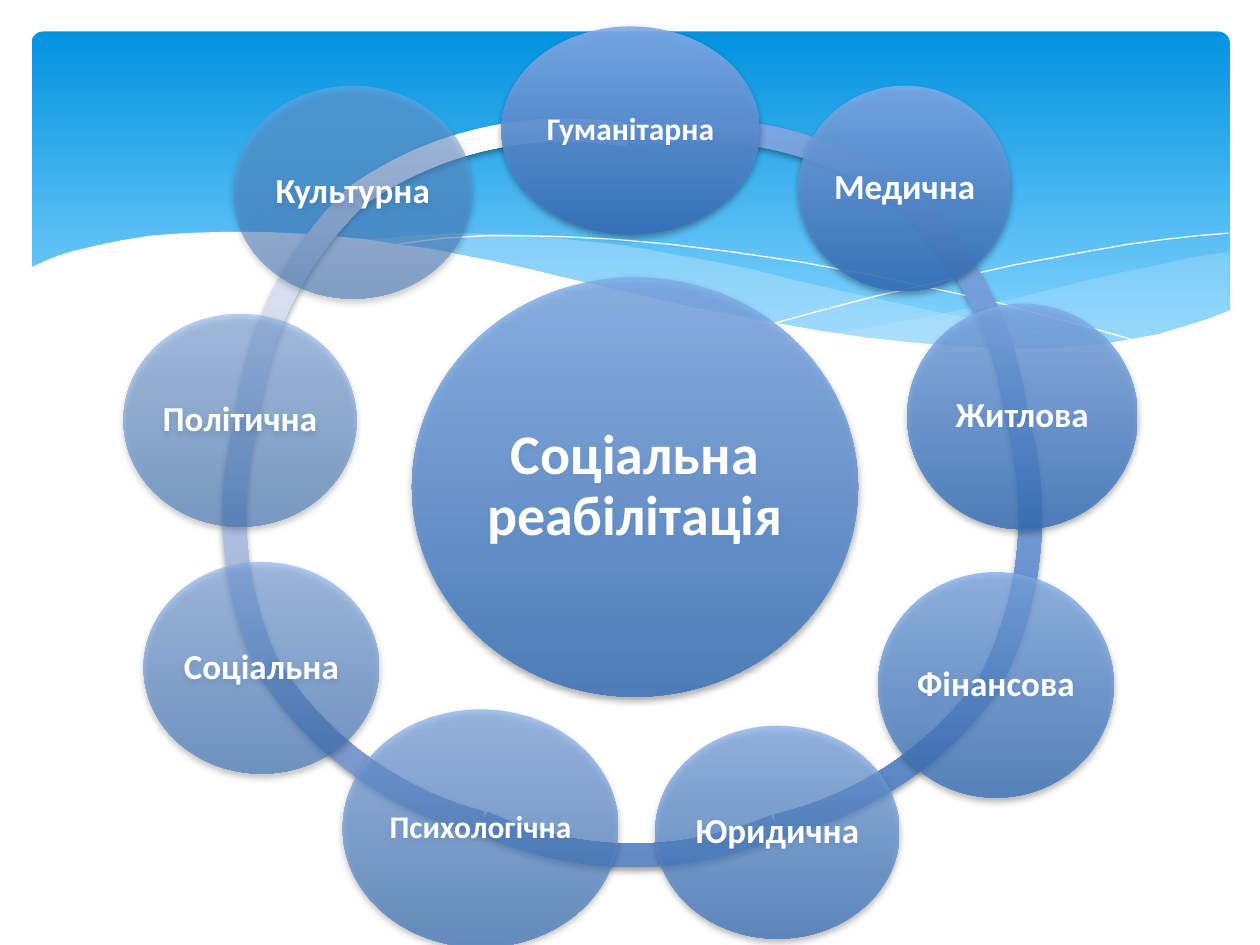
from dataclasses import dataclass

from lxml import etree
from pptx import Presentation
from pptx.dml.color import RGBColor
from pptx.enum.shapes import MSO_SHAPE
from pptx.enum.text import MSO_ANCHOR, PP_ALIGN
from pptx.oxml.ns import qn
from pptx.util import Inches, Pt

ROUNDED, ARC, ELLIPSE = MSO_SHAPE.ROUNDED_RECTANGLE, MSO_SHAPE.BLOCK_ARC, MSO_SHAPE.OVAL
MIDDLE, CENTER = MSO_ANCHOR.MIDDLE, PP_ALIGN.CENTER


@dataclass(frozen=True)
class Theme:
    font: str = "Calibri"
    white: str = "FFFFFF"
    wave: str = "C6E7FC"
    sky: tuple = ("0293E0", "83D3FE")
    bubble: tuple = ("80ACEA", "3570BA")
    shadow: str = "000000"
    hub_size: int = 32
    node_size: int = 20
    long_node_size: int = 18


class Diagram:
    """Draws the elements of one slide in one theme."""

    def __init__(self, slide, theme):
        self.shapes = slide.shapes
        self.theme = theme

    def set_opacity(self, shape, percent):
        for color in shape.element.spPr.iter(qn("a:srgbClr")):
            etree.SubElement(color, qn("a:alpha"), val=str(percent * 1000))

    def add_shadow(self, shape):
        effects = shape.element.spPr.find(qn("a:effectLst"))
        outer = etree.SubElement(effects, qn("a:outerShdw"), blurRad=str(Pt(4)),
                                 dist=str(Pt(2)), dir="5400000", rotWithShape="0")
        color = etree.SubElement(outer, qn("a:srgbClr"), val=self.theme.shadow)
        etree.SubElement(color, qn("a:alpha"), val="38000")

    def gradient_shape(self, kind, box, colors, end=1.0):
        """Add a borderless shape shaded from its top down to the second colour."""
        shape = self.shapes.add_shape(kind, *(Inches(length) for length in box))
        shape.shadow.inherit = False
        shape.line.fill.background()
        shape.fill.gradient()
        shape.fill.gradient_angle = 270
        for stop, color, position in zip(shape.fill.gradient_stops, colors, (0, end)):
            stop.color.rgb = RGBColor.from_string(color)
            stop.position = position
        return shape

    def banner(self, box):
        panel = self.gradient_shape(ROUNDED, box, self.theme.sky, end=0.9)
        panel.adjustments[0] = 0.034

    def outline(self, points, closed):
        start, *rest = [(Inches(x), Inches(y)) for x, y in points]
        builder = self.shapes.build_freeform(*start)
        builder.add_line_segments(rest, close=closed)
        shape = builder.convert_to_shape()
        shape.shadow.inherit = False
        return shape

    def wave(self, points, color, opacity=100):
        shape = self.outline(points, closed=True)
        shape.line.fill.background()
        shape.fill.solid()
        shape.fill.fore_color.rgb = RGBColor.from_string(color)
        if opacity < 100:
            self.set_opacity(shape, opacity)

    def hairline(self, points):
        shape = self.outline(points, closed=False)
        shape.fill.background()
        shape.line.color.rgb = RGBColor.from_string(self.theme.white)
        shape.line.width = Pt(0)

    def ring_arc(self, left, top, start, end, colors):
        arc = self.gradient_shape(ARC, (left, top, RING_SIZE, RING_SIZE), colors)
        for index, value in enumerate((start, end, 0.031)):
            arc.adjustments[index] = value
        self.add_shadow(arc)

    def bubble(self, label, box, size, opacity, inset=0.03):
        bubble = self.gradient_shape(ELLIPSE, box, self.theme.bubble)
        self.set_opacity(bubble, opacity)
        self.add_shadow(bubble)
        frame = bubble.text_frame
        frame.text = label
        frame.word_wrap = True
        frame.vertical_anchor = MIDDLE
        frame.margin_left = frame.margin_right = Inches(inset)
        frame.margin_top = frame.margin_bottom = Inches(inset)
        paragraph = frame.paragraphs[0]
        paragraph.alignment = CENTER
        paragraph.line_spacing = 0.9
        font = paragraph.runs[0].font
        font.name, font.size, font.bold = self.theme.font, Pt(size), True
        font.color.rgb = RGBColor.from_string(self.theme.white)


RING_SIZE = 5.93

RIGHT_WAVE = [
    (9.75, 2), (9.48, 2.04), (9.21, 2.1), (8.91, 2.16), (8.61, 2.23), (8.05, 2.37),
    (7.53, 2.48), (7.06, 2.57), (6.61, 2.65), (6.91, 2.69), (7.19, 2.72), (7.45, 2.75),
    (7.69, 2.77), (8.03, 2.78), (8.35, 2.77), (8.63, 2.75), (8.89, 2.72), (9.13, 2.67),
    (9.35, 2.62), (9.49, 2.57), (9.63, 2.52), (9.76, 2.47), (9.76, 2)]
MIDDLE_WAVE = [
    (8.93, 2.73), (8.66, 2.69), (8.07, 2.6), (7.41, 2.47), (6.68, 2.31), (6.29, 2.22),
    (5.98, 2.14), (5.69, 2.08), (5.41, 2.03), (5.14, 1.98), (4.89, 1.94), (4.42, 1.89),
    (3.99, 1.86), (3.61, 1.85), (3.28, 1.87), (2.86, 1.91), (3.23, 1.96), (3.62, 2.03),
    (4.04, 2.11), (4.49, 2.22), (4.91, 2.32), (5.3, 2.4), (5.66, 2.48), (6.01, 2.55),
    (6.34, 2.61), (6.65, 2.66), (6.95, 2.7), (7.22, 2.74), (7.48, 2.76), (7.73, 2.77),
    (7.96, 2.78), (8.28, 2.78), (8.57, 2.77), (8.76, 2.75)]
FALLING_LINE = [
    (3.09, 1.95), (3.28, 1.92), (3.53, 1.89), (3.87, 1.87), (4.16, 1.87), (4.5, 1.88),
    (4.89, 1.9), (5.33, 1.94), (5.82, 2), (6.36, 2.08), (6.95, 2.19), (7.27, 2.26),
    (7.6, 2.33), (7.95, 2.41), (8.31, 2.51), (8.69, 2.61), (9.07, 2.72)]
RISING_LINE = [
    (6.13, 2.57), (6.53, 2.46), (6.95, 2.35), (7.48, 2.23), (8.06, 2.1), (8.66, 1.99),
    (8.95, 1.94), (9.24, 1.9), (9.51, 1.87), (9.75, 1.85)]
WHITE_WAVE = [
    (9.77, 2.46), (9.59, 2.53), (9.4, 2.59), (9.2, 2.65), (8.99, 2.69), (8.75, 2.73),
    (8.5, 2.75), (8.23, 2.77), (7.93, 2.76), (7.61, 2.75), (7.26, 2.72), (6.88, 2.68),
    (6.48, 2.62), (6.03, 2.54), (5.55, 2.45), (5.03, 2.33), (4.47, 2.2), (4.18, 2.13),
    (3.91, 2.07), (3.65, 2.02), (3.4, 1.97), (3.16, 1.94), (2.92, 1.9), (2.71, 1.88),
    (2.5, 1.86), (2.3, 1.85), (2.11, 1.84), (1.77, 1.84), (1.46, 1.85), (1.19, 1.87),
    (0.95, 1.91), (0.76, 1.95), (0.59, 1.99), (0.46, 2.03), (0.36, 2.07), (0.23, 2.13),
    (0.23, 3.29), (9.77, 3.29)]

# Left, top, start and end adjustments, gradient colours
RING_ARCS = [
    (1.52, 0.94, 140.81, 168.09, ("FFFFFF", "9BADD2")),
    (1.85, 0.67, 111.61, 135.84, ("F3F6FC", "8EA3CF")),
    (1.77, 1.12, 93.18, 116.9, ("E1E9F8", "809ACC")),
    (1.59, 0.79, 62.85, 88.77, ("CFDCF4", "7291C8")),
    (2.06, 0.95, 40.1, 68.71, ("BDD0F0", "6489C5")),
    (2.55, 0.79, 20.97, 46.16, ("ABC4EC", "5681C2")),
    (2.34, 1.13, 206.59, 16.33, ("9AB9E9", "4879BF")),
    (2.25, 0.69, 187.28, 211.86, ("89AFE5", "3E72B8")),
    (2.57, 0.94, 155.69, 182.58, ("7AA5E2", "386CAC"))]

# Clockwise from the top
REHABILITATION_KINDS = [
    ("Гуманітарна", (3.98, 0.21, 2.05, 1.65)),
    ("Медична", (6.34, 0.68, 1.68, 1.63)),
    ("Житлова", (7.2, 2.41, 1.83, 1.79)),
    ("Фінансова", (6.97, 4.54, 1.87, 1.79)),
    ("Юридична", (5.2, 5.76, 1.94, 1.69)),
    ("Психологічна", (2.72, 5.63, 2.19, 1.89)),
    ("Соціальна", (1.14, 4.46, 1.87, 1.68)),
    ("Політична", (0.98, 2.49, 1.85, 1.69)),
    ("Культурна", (1.85, 0.68, 1.9, 1.69))]


def main():
    presentation = Presentation()
    presentation.slide_width, presentation.slide_height = Inches(10), Inches(7.5)
    theme = Theme()
    diagram = Diagram(presentation.slides.add_slide(presentation.slide_layouts[6]), theme)

    diagram.banner((0.25, 0.25, 9.51, 2.7))
    diagram.wave(RIGHT_WAVE, theme.wave, opacity=29)
    diagram.wave(MIDDLE_WAVE, theme.wave, opacity=40)
    diagram.hairline(FALLING_LINE)
    diagram.hairline(RISING_LINE)
    diagram.wave(WHITE_WAVE, theme.white)

    for arc in RING_ARCS:
        diagram.ring_arc(*arc)
    diagram.bubble("Соціальна реабілітація", (3.27, 2.2, 3.54, 3.33),
                   theme.hub_size, opacity=80, inset=0.04)
    for index, (label, box) in enumerate(REHABILITATION_KINDS):
        size = theme.long_node_size if len(label) > 10 else theme.node_size
        diagram.bubble(label, box, size, opacity=90 - 5 * index)

    presentation.save("out.pptx")


if __name__ == "__main__":
    main()
